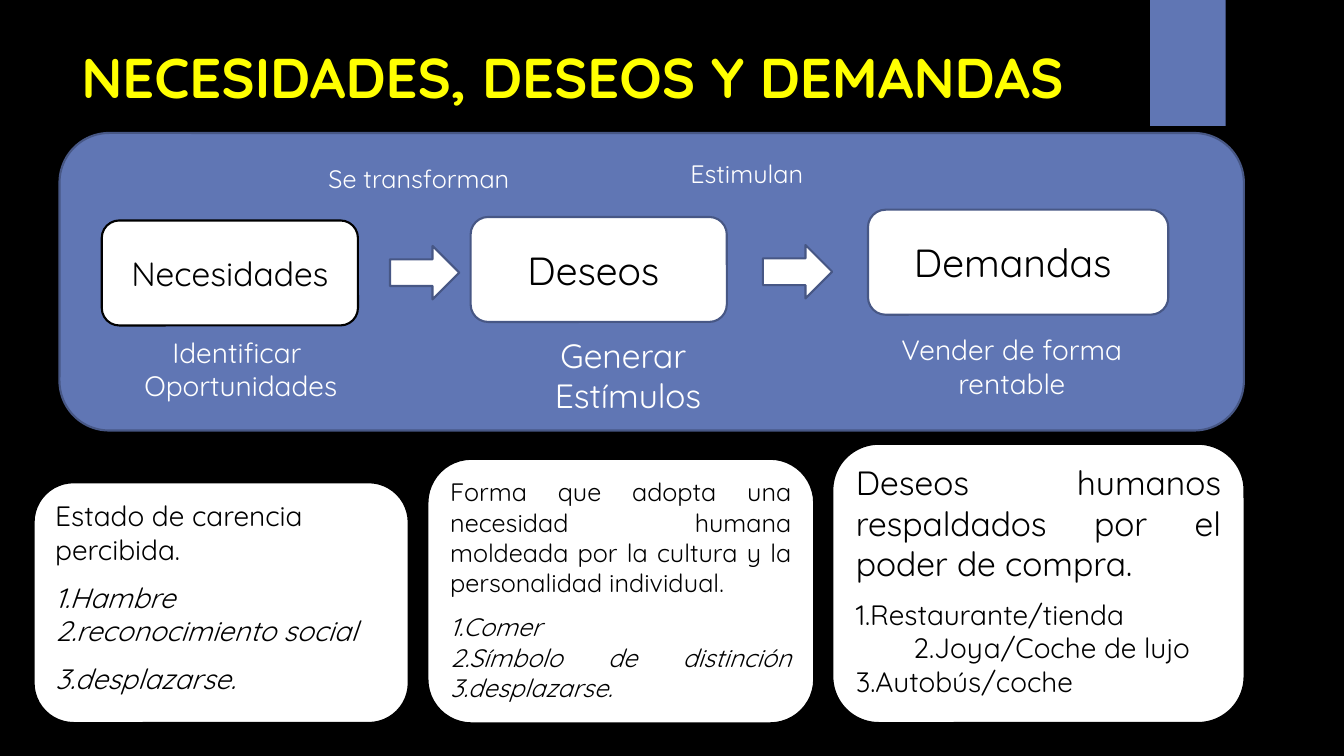
from pptx import Presentation
from pptx.dml.color import RGBColor
from pptx.enum import shapes, text
from pptx.util import Pt

ROUND = shapes.MSO_SHAPE.ROUNDED_RECTANGLE
RECT = shapes.MSO_SHAPE.RECTANGLE
ARROW = shapes.MSO_SHAPE.RIGHT_ARROW
TOP, MID = text.MSO_ANCHOR.TOP, text.MSO_ANCHOR.MIDDLE
LEFT, CENTER, FULL = text.PP_ALIGN.LEFT, text.PP_ALIGN.CENTER, text.PP_ALIGN.JUSTIFY
BLACK, WHITE, YELLOW = "000000", "FFFFFF", "FFFF00"
BLUE, NAVY = "6076B4", "475785"


def rgb(code):
    return RGBColor.from_string(code)


class Deck:
    face = "Quicksand"

    def __init__(self, wide, high):
        self.file = Presentation()
        self.file.slide_width, self.file.slide_height = Pt(wide), Pt(high)
        self.slide = self.file.slides.add_slide(self.file.slide_layouts[6])
        self.paint(self.slide.background, BLACK)

    def paint(self, item, color):
        item.fill.solid()
        item.fill.fore_color.rgb = rgb(color)

    def shape(self, kind, box, fill, line=None):
        item = self.slide.shapes.add_shape(kind, *map(Pt, box))
        item.shadow.inherit = False
        self.paint(item, fill)
        if line:
            item.line.color.rgb = rgb(line)
            item.line.width = Pt(1.5)
        else:
            item.line.fill.background()
        return item

    def words(self, item, rows, color, align=LEFT, anchor=TOP):
        frame = item.text_frame
        frame.word_wrap = True
        frame.vertical_anchor = anchor
        for n, (line, size, look) in enumerate(rows):
            para = frame.paragraphs[0] if n == 0 else frame.add_paragraph()
            para.text = line
            para.alignment = align
            para.space_before = Pt(look.get("gap", 0))
            if "indent" in look:
                para._p.get_or_add_pPr().set("indent", str(Pt(look["indent"])))
            form = {"name": self.face, "size": Pt(size),
                    "bold": look.get("bold", False),
                    "italic": look.get("italic", False)}
            for key, value in form.items():
                setattr(para.font, key, value)
            para.font.color.rgb = rgb(color)

    def label(self, box, rows, color=WHITE, align=LEFT):
        item = self.slide.shapes.add_textbox(*map(Pt, box))
        self.words(item, rows, color, align)

    def step(self, box, word, size, line):
        item = self.shape(ROUND, box, WHITE, line)
        self.words(item, [(word, size, {})], BLACK, CENTER, MID)

    def card(self, box, rows, align):
        item = self.shape(ROUND, box, WHITE, BLACK)
        self.words(item, rows, BLACK, align)


def main():
    deck = Deck(960, 540)
    deck.shape(RECT, (821.5, 0, 54, 90), BLUE)
    deck.label((51, 26.5, 741, 110),
               [("NECESIDADES, DESEOS Y DEMANDAS", 40, {"bold": True})], YELLOW)
    deck.shape(ROUND, (42.5, 95, 846, 212.5), BLUE, NAVY)

    steps = [((72.7, 157.5, 183, 75), "Necesidades", 24, BLACK),
             ((336.2, 155, 183, 75), "Deseos ", 28, NAVY),
             ((620, 149.8, 214.5, 75), "Demandas ", 28, NAVY)]
    for item in steps:
        deck.step(*item)
    for left, top in [(278.6, 175.7), (545, 175)]:
        deck.shape(ARROW, (left, top, 49.5, 38.2), WHITE, NAVY)

    for left, top, word in [(227.5, 113, "Se transforman"), (486, 109.5, "Estimulan")]:
        deck.label((left, top, 167, 29), [(word, 18, {})])

    goals = [((88.5, 236, 167, 55.5), 20, ("Identificar ", "Oportunidades")),
             ((352, 235.5, 193, 65.5), 24, ("Generar ", "Estímulos")),
             ((624, 234, 197.5, 55.5), 20, ("Vender de forma", "rentable"))]
    for box, size, lines in goals:
        deck.label(box, [(line, size, {}) for line in lines], align=CENTER)

    slant = {"italic": True}
    lead = {"italic": True, "gap": 10}
    cards = [
        ((24, 344.5, 268, 172), LEFT,
         [("Estado de carencia percibida.", 20, {}),
          ("1.Hambre", 20, lead),
          ("2.reconocimiento social", 20, slant),
          ("3.desplazarse.", 20, lead)]),
        ((305.3, 327.7, 276.3, 189), FULL,
         [("Forma que adopta una necesidad humana moldeada por la cultura "
           "y la personalidad individual.", 18, {}),
          ("1.Comer", 18, lead),
          ("2.Símbolo de distinción 3.desplazarse.", 18, slant)]),
        ((594.5, 317, 294.5, 199.5), FULL,
         [("Deseos humanos respaldados por el poder de compra.", 24, {}),
          ("1.Restaurante/tienda", 20, {"gap": 10}),
          ("2.Joya/Coche de lujo", 20, {"indent": 41}),
          ("3.Autobús/coche", 20, {})])]
    for box, align, rows in cards:
        deck.card(box, rows, align)
    deck.file.save("out.pptx")


if __name__ == "__main__":
    main()
